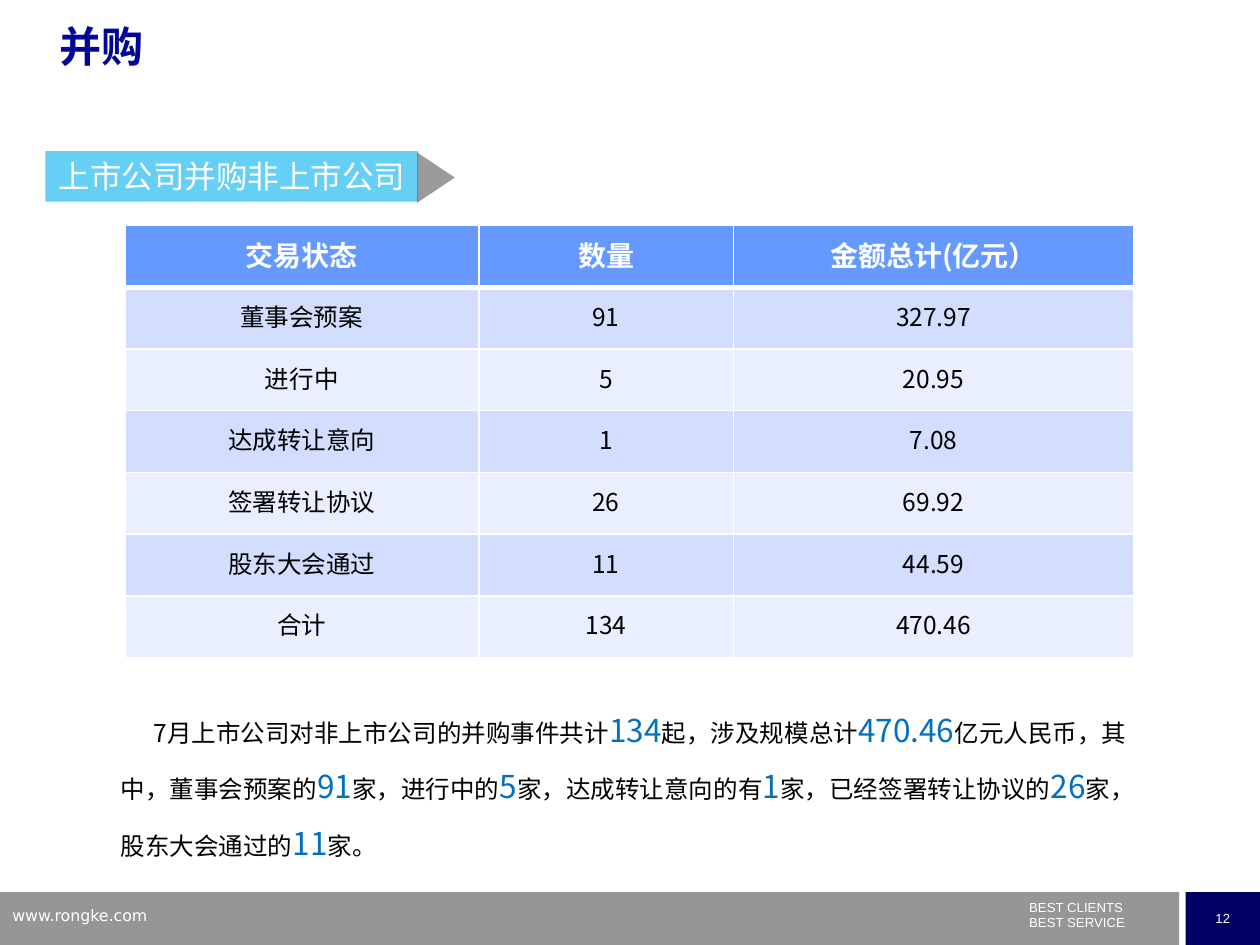
from lxml.etree import SubElement
from pptx import Presentation
from pptx.dml.color import RGBColor
from pptx.enum.shapes import MSO_SHAPE
from pptx.enum.text import MSO_ANCHOR, MSO_AUTO_SIZE, PP_ALIGN
from pptx.oxml.ns import qn
from pptx.util import Inches, Pt

COLORS = {
    "white": "FFFFFF", "black": "000000", "title": "000798", "navy": "000066",
    "footer": "969696", "banner": "00B0F0", "arrow": "595959", "figure": "0070C0",
    "header": "6699FF", "odd_row": "D3DEFF", "even_row": "EAEFFF",
}
CJK = "Noto Sans CJK SC"
STATUS_ROWS = [
    ("交易状态", "数量", "金额总计(亿元）"),
    ("董事会预案", "91", "327.97"),
    ("进行中", "5", "20.95"),
    ("达成转让意向", "1", "7.08"),
    ("签署转让协议", "26", "69.92"),
    ("股东大会通过", "11", "44.59"),
    ("合计", "134", "470.46"),
]
# Words and figures alternate, starting with words.
SUMMARY = [
    "7月上市公司对非上市公司的并购事件共计", "134", "起，涉及规模总计", "470.46",
    "亿元人民币，其中，董事会预案的", "91", "家，进行中的", "5", "家，达成转让意向的有", "1",
    "家，已经签署转让协议的", "26", "家，股东大会通过的", "11", "家。",
]


def rgb(name):
    return RGBColor.from_string(COLORS[name])


def add_text(paragraph, text, size=14, color="black", font=CJK, bold=False,
             align=PP_ALIGN.LEFT, spacing=None):
    paragraph.alignment = align
    if spacing:
        paragraph.line_spacing = spacing
    run = paragraph.add_run()
    run.text = text
    run.font.size = Pt(size)
    run.font.bold = bold
    run.font.name = font
    run.font.color.rgb = rgb(color)
    SubElement(run.font._element, qn("a:ea")).set("typeface", CJK)


def set_border(cell, side, width):
    line = SubElement(cell._tc.get_or_add_tcPr(), qn(f"a:{side}"), w=str(Pt(width)))
    fill = SubElement(line, qn("a:solidFill"))
    SubElement(fill, qn("a:srgbClr"), val=COLORS["white"])


class SlideBuilder:
    def __init__(self, presentation):
        self.slide = presentation.slides.add_slide(presentation.slide_layouts[5])

    def title(self, text, left, top, width, height):
        title = self.slide.shapes.title
        title.left, title.top = Inches(left), Inches(top)
        title.width, title.height = Inches(width), Inches(height)
        frame = title.text_frame
        frame.vertical_anchor = MSO_ANCHOR.TOP
        frame.auto_size = MSO_AUTO_SIZE.NONE
        add_text(frame.paragraphs[0], text, size=24, color="title", font="Arial",
                 bold=True, spacing=0.9)

    def shape(self, kind, left, top, width, height, color, opacity=None, rotation=0):
        shape = self.slide.shapes.add_shape(
            kind, Inches(left), Inches(top), Inches(width), Inches(height))
        shape.shadow.inherit = False
        shape.fill.solid()
        shape.fill.fore_color.rgb = rgb(color)
        shape.line.fill.background()
        shape.rotation = rotation
        if opacity:
            fill_color = shape._element.spPr.find(f".//{qn('a:srgbClr')}")
            SubElement(fill_color, qn("a:alpha"), val=str(opacity * 1000))
        frame = shape.text_frame
        frame.vertical_anchor = MSO_ANCHOR.MIDDLE
        return frame

    def text_box(self, left, top, width, height):
        box = self.slide.shapes.add_textbox(
            Inches(left), Inches(top), Inches(width), Inches(height))
        box.text_frame.word_wrap = True
        return box.text_frame

    def table(self, rows, left, top, column_widths, row_height):
        table = self.slide.shapes.add_table(
            len(rows), len(column_widths), Inches(left), Inches(top),
            Inches(sum(column_widths)), Inches(row_height * len(rows))).table
        for column, width in zip(table.columns, column_widths):
            column.width = Inches(width)
        for row_index, values in enumerate(rows):
            table.rows[row_index].height = Inches(row_height)
            for column_index, value in enumerate(values):
                self.cell(table.cell(row_index, column_index), value, row_index)

    def cell(self, cell, value, row_index):
        is_header = row_index == 0
        cell.vertical_anchor = MSO_ANCHOR.MIDDLE
        cell.margin_left = cell.margin_right = cell.margin_top = Inches(0.01)
        cell.margin_bottom = Inches(0.05)
        for side in ("lnL", "lnR", "lnT", "lnB"):
            touches_header_rule = (row_index, side) in ((0, "lnB"), (1, "lnT"))
            set_border(cell, side, 3 if touches_header_rule else 1)
        cell.fill.solid()
        band = "odd_row" if row_index % 2 else "even_row"
        cell.fill.fore_color.rgb = rgb("header" if is_header else band)
        add_text(cell.text_frame.paragraphs[0], value, size=16 if is_header else 14,
                 color="white" if is_header else "black", bold=is_header,
                 align=PP_ALIGN.CENTER)

    def footer(self, address, slogan_lines, number):
        self.shape(MSO_SHAPE.RECTANGLE, 0, 7.08, 9.36, 0.42, "footer")
        page = self.shape(MSO_SHAPE.RECTANGLE, 9.41, 7.08, 0.59, 0.42, "navy")
        page.word_wrap = False
        add_text(page.paragraphs[0], number, size=7.5, color="white", font="Arial",
                 align=PP_ALIGN.CENTER)
        slogan = self.text_box(8.07, 7.14, 1.5, 0.29)
        for index, line in enumerate(slogan_lines):
            paragraph = slogan.add_paragraph() if index else slogan.paragraphs[0]
            if index:
                paragraph.space_before = Pt(4.3)
            add_text(paragraph, line, size=7.5, color="white", font="Arial", spacing=0.5)
        add_text(self.text_box(0, 7.14, 2.4, 0.26).paragraphs[0], address, size=9,
                 color="white", font="DejaVu Sans")

    def banner(self, text):
        label = self.shape(MSO_SHAPE.RECTANGLE, 0.36, 1.2, 2.96, 0.4, "banner", opacity=60)
        label.word_wrap = False
        add_text(label.paragraphs[0], text, size=18, color="white", align=PP_ALIGN.CENTER)
        self.shape(MSO_SHAPE.ISOSCELES_TRIANGLE, 3.26, 1.26, 0.4, 0.3, "arrow",
                   opacity=60, rotation=90)

    def summary(self, pieces):
        paragraph = self.text_box(0.86, 5.44, 8.29, 1.41).paragraphs[0]
        paragraph._p.get_or_add_pPr().set("indent", str(Inches(0.26)))
        for index, piece in enumerate(pieces):
            is_figure = index % 2 == 1
            add_text(paragraph, piece, size=18 if is_figure else 14,
                     color="figure" if is_figure else "black", spacing=1.5)


def main():
    presentation = Presentation()
    presentation.slide_width, presentation.slide_height = Inches(10), Inches(7.5)
    builder = SlideBuilder(presentation)
    builder.footer("www.rongke.com", ["BEST CLIENTS", "BEST SERVICE"], "12")
    builder.banner("上市公司并购非上市公司")
    builder.title("并购", 0.37, 0.16, 9, 0.7)
    builder.summary(SUMMARY)
    builder.table(STATUS_ROWS, 0.99, 1.79, [2.81, 2.02, 3.18], 0.49)
    presentation.save("out.pptx")


if __name__ == "__main__":
    main()
